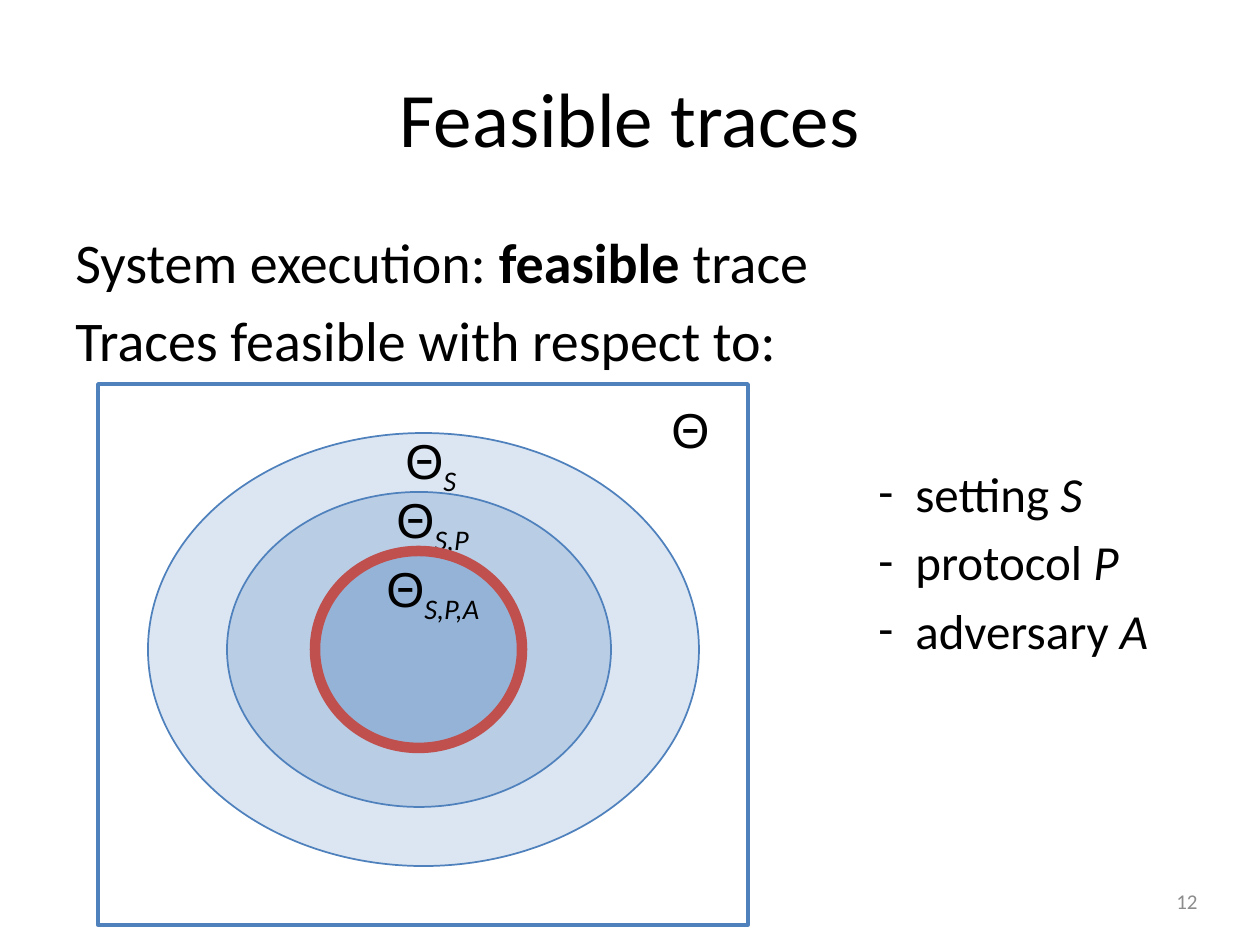
from pptx import Presentation
from pptx.dml.color import RGBColor as RGB
from pptx.enum.shapes import MSO_SHAPE as SHAPE
from pptx.enum.text import MSO_ANCHOR as ANCHOR, PP_ALIGN as ALIGN
from pptx.oxml import parse_xml
from pptx.oxml.ns import nsdecls
from pptx.util import Pt

EMU = 914400 / 126  # EMU in one px
THEME = {
    "font": "Calibri", "symbol_font": "Arial",
    "text": "000000", "muted": "8C8C8C", "line": "4F81BD", "accent": "C0504D",
    "setting": "DCE6F2", "protocol": "B9CDE5", "adversary": "95B3D7",
    "title": 44, "body": 32, "item": 28, "label": 28, "number": 12,
}


def add_figure(kind, box, fill, line, width):
    s = shapes.add_shape(kind, *[int(v * EMU) for v in box])
    s.shadow.inherit = False
    if fill:
        s.fill.solid()
        s.fill.fore_color.rgb = RGB.from_string(THEME[fill])
    else:
        s.fill.background()
    s.line.color.rgb = RGB.from_string(THEME[line])
    s.line.width = Pt(width)


def add_text(box, paragraphs, size, color="text", align=ALIGN.LEFT,
             anchor=ANCHOR.TOP, wrap=True):
    """Each paragraph is a list of (text, font values); "sub" lowers a run."""
    s = shapes.add_textbox(*[int(v * EMU) for v in box])
    tf = s.text_frame
    tf.word_wrap, tf.vertical_anchor = wrap, anchor
    for i, runs in enumerate(paragraphs):
        p = tf.paragraphs[0] if i == 0 else tf.add_paragraph()
        p.alignment = align
        if i:
            p.space_before = Pt(THEME[size] * 0.2)
        for text, style in runs:
            r = p.add_run()
            r.text = text
            r.font.color.rgb = RGB.from_string(THEME[color])
            values = {"name": THEME["font"], "size": Pt(THEME[size]), **style}
            if values.pop("sub", False):
                r._r.get_or_add_rPr().set("baseline", "-25000")
            for name, value in values.items():
                setattr(r.font, name, value)
    return tf


prs = Presentation()
prs.slide_width, prs.slide_height = int(1260 * EMU), int(945 * EMU)
shapes = prs.slides.add_slide(prs.slide_layouts[6]).shapes

add_text((63, 38, 1134, 157), [[("Feasible traces", {})]], "title",
         align=ALIGN.CENTER, anchor=ANCHOR.MIDDLE)
add_text((63, 221, 1134, 160), [
    [("System execution: ", {}), ("feasible", {"bold": True}), (" trace", {})],
    [("Traces feasible with respect to:", {})],
], "body")

# Nested trace sets, from the universe inwards
add_figure(SHAPE.RECTANGLE, (98, 384, 650, 541), None, "line", 2)
inner = (315, 551, 207, 197)
trace_sets = [
    ("setting", (148, 433, 551, 433), "S", (393, 424, 77, 72)),
    ("protocol", (227, 492, 384, 315), "S,P", (384, 483, 102, 72)),
    ("adversary", inner, "S,P,A", (374, 552, 126, 72)),
]
theta = ("Θ", {"name": THEME["symbol_font"]})
for fill, box, index, label_box in trace_sets:
    add_figure(SHAPE.OVAL, box, fill, "line", 1)
    add_text(label_box, [[theta, (index, {"italic": True, "sub": True})]],
             "label", wrap=False)
add_text((659, 393, 62, 72), [[theta]], "label", wrap=False)
add_figure(SHAPE.OVAL, inner, None, "accent", 6)

# Dashed list of what feasibility depends on
items = [("setting ", "S"), ("protocol ", "P"), ("adversary ", "A")]
tf = add_text((866, 457, 331, 210),
              [[(word, {}), (symbol, {"italic": True})] for word, symbol in items],
              "item")
for p in tf.paragraphs:
    pPr = p._p.get_or_add_pPr()
    pPr.set("marL", str(int(37 * EMU)))
    pPr.set("indent", str(int(-37 * EMU)))
    pPr.append(parse_xml(f'<a:buFont {nsdecls("a")} typeface="{THEME["font"]}"/>'))
    pPr.append(parse_xml(f'<a:buChar {nsdecls("a")} char="-"/>'))

add_text((916, 876, 294, 50), [[("12", {})]], "number", color="muted",
         align=ALIGN.RIGHT, anchor=ANCHOR.MIDDLE)

prs.save("out.pptx")
